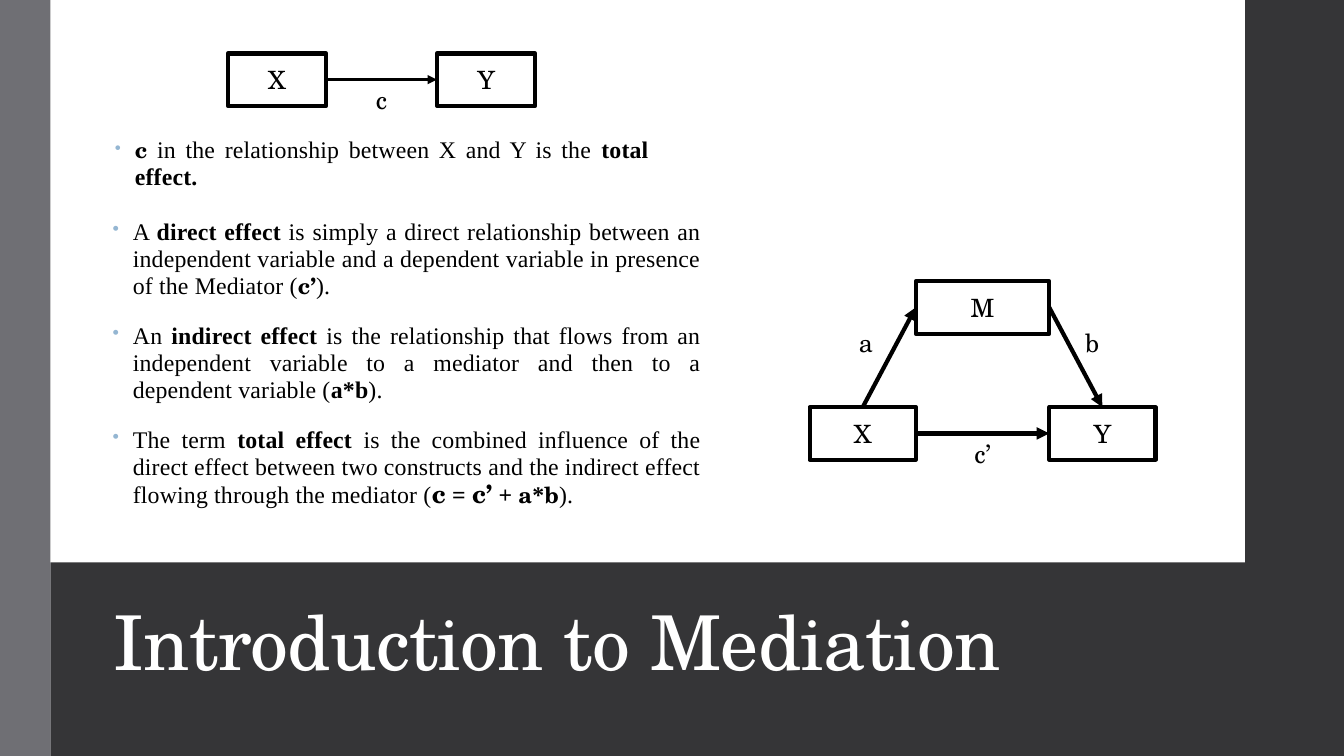
from lxml.etree import SubElement
from pptx import Presentation
from pptx.dml.color import RGBColor
from pptx.enum.shapes import MSO_CONNECTOR as CONN, MSO_SHAPE as SHAPE
from pptx.enum.text import MSO_ANCHOR as ANCHOR, PP_ALIGN as ALIGN
from pptx.oxml.ns import qn
from pptx.util import Inches, Pt

W, H = 13.33, 7.5
BAND_TOP, LEFT_BAR, RIGHT_BAR = 5.58, 0.5, 12.35
SERIF, SCHOLA = "Times New Roman", "TeX Gyre Schola"
BLACK, WHITE, DARK, GREY, BULLET = "000000", "FFFFFF", "353537", "6F6F74", "94B6D2"
NODE_H, LABEL_W, LABEL_H = 0.52, 0.36, 0.4
TOP, LEFT, BOTTOM, RIGHT = range(4)

BOLD = dict(bold=True)
SYMBOL = dict(font=SCHOLA, size=16, bold=True)
BIG_SYMBOL = dict(font=SCHOLA, size=18, bold=True)

TOTAL = [
    [("c", SYMBOL), (" in the relationship between X and Y is the ", {}), ("total effect.", BOLD)],
]
EFFECTS = [
    [("A ", {}), ("direct effect", BOLD),
     (" is simply a direct relationship between an independent variable and a "
      "dependent variable in presence of the Mediator (", {}),
     ("c’", SYMBOL), (").", {})],
    [("An ", {}), ("indirect effect", BOLD),
     (" is the relationship that flows from an independent variable to a mediator "
      "and then to a dependent variable (", {}),
     ("a*b", BOLD), (").", {})],
    [("The term ", {}), ("total effect", BOLD),
     (" is the combined influence of the direct effect between two constructs and "
      "the indirect effect flowing through the mediator (", {}),
     ("c", BIG_SYMBOL), (" = ", BOLD), ("c’", BIG_SYMBOL), (" + ", BOLD),
     ("a", SYMBOL), ("*", BOLD), ("b", SYMBOL), (").", {})],
]


def rgb(color):
    return RGBColor.from_string(color)


def add_run(p, text, font=SERIF, size=17, color=BLACK, bold=False, spacing=0):
    r = p.add_run()
    r.text = text
    r.font.name, r.font.size, r.font.bold = font, Pt(size), bold
    r.font.color.rgb = rgb(color)
    if spacing:
        r.font._element.set("spc", str(round(spacing * 100)))


def add_rect(shapes, box, fill, line=None):
    sp = shapes.add_shape(SHAPE.RECTANGLE, *map(Inches, box))
    sp.shadow.inherit = False
    sp.fill.solid()
    sp.fill.fore_color.rgb = rgb(fill)
    if line:
        sp.line.color.rgb = rgb(line)
        sp.line.width = Pt(3)
    else:
        sp.line.fill.background()
    return sp


def add_text(shapes, box, wrap=True, anchor=ANCHOR.TOP):
    tf = shapes.add_textbox(*map(Inches, box)).text_frame
    tf.word_wrap = wrap
    tf.vertical_anchor = anchor
    return tf


def add_node(shapes, name, x, y, w):
    sp = add_rect(shapes, (x, y, w, NODE_H), WHITE, BLACK)
    tf = sp.text_frame
    tf.vertical_anchor = ANCHOR.MIDDLE
    p = tf.paragraphs[0]
    p.alignment = ALIGN.CENTER
    add_run(p, name, font=SCHOLA, size=18)
    return sp


def add_label(shapes, text, center, y):
    tf = add_text(shapes, (center - LABEL_W / 2, y, LABEL_W, LABEL_H), wrap=False)
    p = tf.paragraphs[0]
    p.alignment = ALIGN.CENTER
    add_run(p, text, font=SCHOLA, size=18)


def add_arrow(shapes, start, start_side, end, end_side, width=3):
    cn = shapes.add_connector(CONN.STRAIGHT, 0, 0, 0, 0)
    cn.begin_connect(start, start_side)
    cn.end_connect(end, end_side)
    cn.line.color.rgb = rgb(BLACK)
    cn.line.width = Pt(width)
    SubElement(cn.line._get_or_add_ln(), qn("a:tailEnd"), type="triangle")
    SubElement(cn._element.spPr, qn("a:effectLst"))


def add_bullets(s, box, items):
    tf = add_text(s.shapes, box)
    for i, runs in enumerate(items):
        p = tf.paragraphs[0] if i == 0 else tf.add_paragraph()
        p.alignment = ALIGN.JUSTIFY
        p.line_spacing = 0.95
        p.space_before, p.space_after = Pt(14), Pt(2)
        pPr = p._p.get_or_add_pPr()
        pPr.set("marL", str(Inches(0.2)))
        pPr.set("indent", str(-Inches(0.2)))
        SubElement(SubElement(pPr, qn("a:buClr")), qn("a:srgbClr"), val=BULLET)
        SubElement(pPr, qn("a:buSzPct"), val="80000")
        SubElement(pPr, qn("a:buChar"), char="•")
        for text, fmt in runs:
            add_run(p, text, spacing=0.1, **fmt)


def draw_frame(s):
    band_w = RIGHT_BAR - LEFT_BAR
    add_rect(s.shapes, (LEFT_BAR, 0, band_w, BAND_TOP), WHITE)
    add_rect(s.shapes, (LEFT_BAR, BAND_TOP, band_w, H - BAND_TOP), DARK)
    add_rect(s.shapes, (0, 0, LEFT_BAR, H), GREY)
    add_rect(s.shapes, (RIGHT_BAR, 0, W - RIGHT_BAR, H), DARK)


def draw_title(s, box, text):
    p = add_text(s.shapes, box, anchor=ANCHOR.BOTTOM).paragraphs[0]
    p.line_spacing = 0.85
    add_run(p, text, font=SCHOLA, size=54, color=WHITE, spacing=-0.5)


def draw_total_effect(s, box):
    x, y, w, h = box
    node_w = w * 0.32
    shapes = s.shapes.add_group_shape().shapes
    cause = add_node(shapes, "X", x, y, node_w)
    outcome = add_node(shapes, "Y", x + w - node_w, y, node_w)
    add_arrow(shapes, cause, RIGHT, outcome, LEFT, width=2.25)
    add_label(shapes, "c", x + w / 2, y + h / 2)


def draw_mediation(s, box):
    x, y, w, h = box
    node_w = w * 0.307
    base = y + h - NODE_H
    label_y = y + h * 0.23
    shapes = s.shapes.add_group_shape().shapes
    cause = add_node(shapes, "X", x, base, node_w)
    outcome = add_node(shapes, "Y", x + w - node_w, base, node_w)
    mediator = add_node(shapes, "M", x + node_w, y, w - 2 * node_w)
    add_arrow(shapes, cause, RIGHT, outcome, LEFT)
    add_arrow(shapes, cause, TOP, mediator, LEFT)
    add_arrow(shapes, mediator, RIGHT, outcome, TOP)
    add_label(shapes, "a", x + w * 0.163, label_y)
    add_label(shapes, "b", x + w * 0.817, label_y)
    add_label(shapes, "c’", x + w / 2, base + NODE_H / 2)


def main():
    prs = Presentation()
    prs.slide_width, prs.slide_height = Inches(W), Inches(H)
    s = prs.slides.add_slide(prs.slide_layouts[6])
    draw_frame(s)
    draw_title(s, (1.03, 5.67, 11.11, 1.18), "Introduction to Mediation")
    draw_total_effect(s, (2.26, 0.53, 3.05, NODE_H))
    draw_mediation(s, (8.03, 2.79, 3.43, 1.77))
    add_bullets(s, (1.04, 1.31, 5.49, 0.4), TOTAL)
    add_bullets(s, (1.02, 2.12, 6.03, 3.06), EFFECTS)
    prs.save("out.pptx")


if __name__ == "__main__":
    main()
